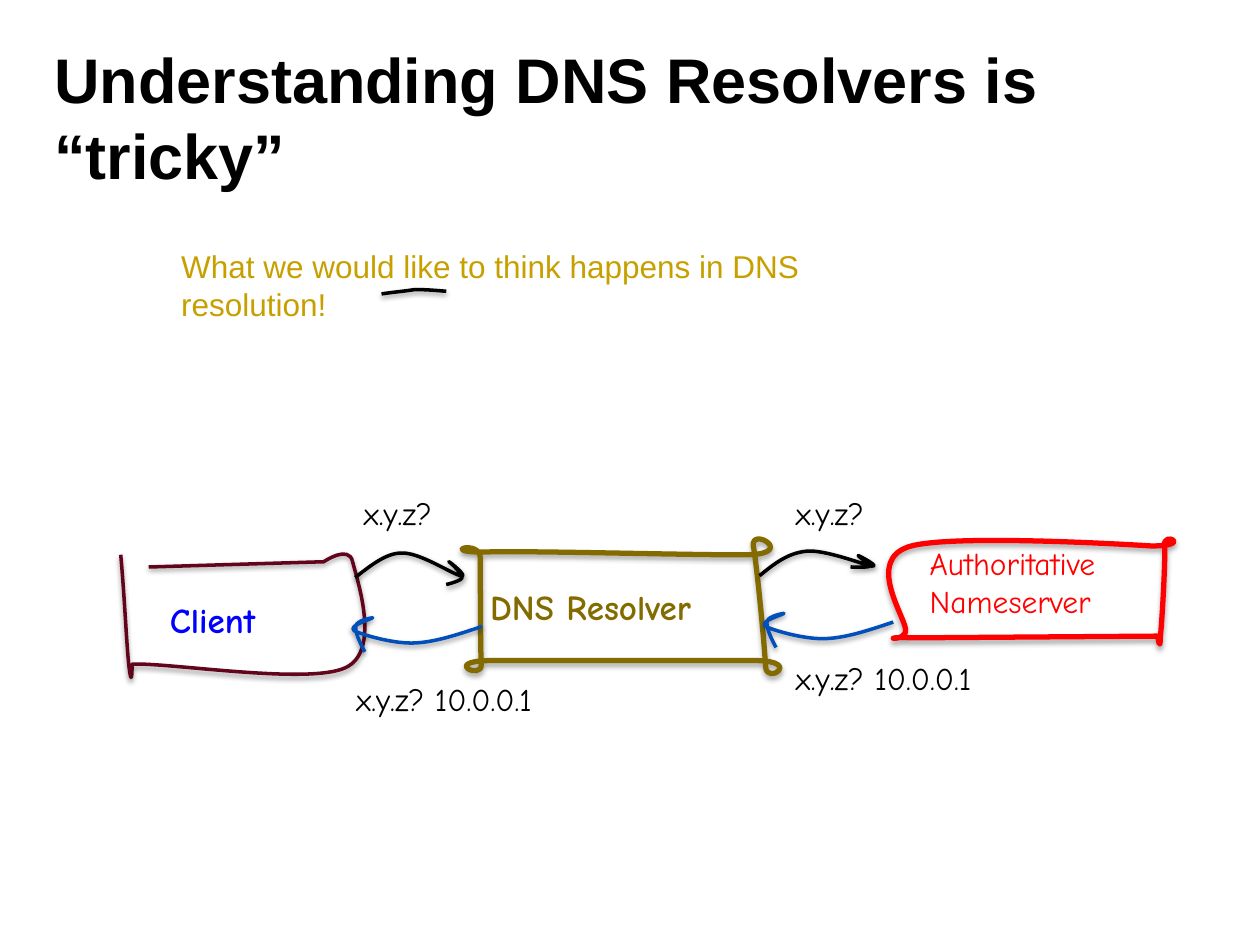
import pptx
import pptx.dml.color
import pptx.enum.text
import pptx.oxml
import pptx.oxml.ns
import pptx.util

Pt = pptx.util.Pt
space = pptx.oxml.ns.nsdecls("a")

deck = pptx.Presentation()
deck.slide_width, deck.slide_height = Pt(720), Pt(540)
slide = deck.slides.add_slide(deck.slide_layouts[6])


def write(left, top, width, height, lines, size, face, code, bold=False):
    """Add a text box with one paragraph per line."""
    box = slide.shapes.add_textbox(Pt(left), Pt(top), Pt(width), Pt(height))
    frame = box.text_frame
    frame.word_wrap = True
    for i, line in enumerate(lines):
        para = frame.add_paragraph() if i else frame.paragraphs[0]
        run = para.add_run()
        run.text = line
        run.font.name = face
        run.font.size = Pt(size)
        run.font.bold = bold
        run.font.color.rgb = pptx.dml.color.RGBColor.from_string(code)
    return frame


def draw(left, top, width, height, knots, code, weight=2, closed=False):
    """Add a curved stroke: a start, then three knots per cubic curve."""
    pen = slide.shapes.build_freeform(Pt(left), Pt(top), scale=1.0)
    pen.add_line_segments([(Pt(left + width), Pt(top + height))], close=closed)
    shape = pen.convert_to_shape()
    shape.fill.background()
    shape.line.color.rgb = pptx.dml.color.RGBColor.from_string(code)
    shape.line.width = Pt(weight)

    # Put curves in place of the plain diagonal
    marks = [f'<a:pt x="{Pt(x - left)}" y="{Pt(y - top)}"/>' for x, y in knots]
    route = shape.element.spPr.find(".//" + pptx.oxml.ns.qn("a:path"))
    for part in list(route):
        route.remove(part)
    parts = [("moveTo", marks[:1])]
    for i in range(0, len(knots) - 1, 3):
        a, b, c, d = marks[i:i + 4]
        straight = a == b and c == d
        parts.append(("lnTo", [d]) if straight else ("cubicBezTo", [b, c, d]))
    if closed:
        parts.append(("close", []))
    for tag, dots in parts:
        route.append(pptx.oxml.parse_xml(
            f'<a:{tag} {space}>{"".join(dots)}</a:{tag}>'))

    # Soft shadow straight below the stroke
    shape.shadow.inherit = False
    effects = shape.element.spPr.find(pptx.oxml.ns.qn("a:effectLst"))
    drop, alpha = (1.8, 35000) if weight == 3 else (1.6, 38000)
    effects.append(pptx.oxml.parse_xml(
        f'<a:outerShdw {space} blurRad="{Pt(3.1)}" dist="{Pt(drop)}" '
        'dir="5400000" rotWithShape="0"><a:srgbClr val="000000">'
        f'<a:alpha val="{alpha}"/></a:srgbClr></a:outerShdw>'))


comic = "Comic Neue"
black, blue = "000000", "004FBA"

# Title
title = write(31, 21.6, 657.4, 90, ["Understanding DNS Resolvers is “tricky”"],
              36, "Arial", black, True)
title.vertical_anchor = pptx.enum.text.MSO_ANCHOR.MIDDLE
title.margin_left = title.margin_right = Pt(0)
title.margin_top = title.margin_bottom = Pt(0)

# Lead line, with one word underlined by hand
write(96.5, 137.5, 427.7, 29,
      ["What we would like to think happens in DNS resolution!"],
      18, "Arial", "C7A000")
draw(218, 165.5, 37, 2.5, [
    (218, 168), (224.5, 167), (231, 166.5), (237, 165.5),
    (243.5, 165.5), (249, 166), (255, 166.5)], black)

# Client
write(90, 338.4, 80, 31.5, ["Client"], 20, comic, "0000FF", True)
draw(69, 316, 140, 70.5, [
    (69, 317), (71.5, 345), (72.5, 373), (74, 383),
    (75.5, 394), (75.5, 379.5), (75.5, 379.5),
    (96.5, 378.5), (176.5, 391.5), (197.5, 381.5),
    (218, 372), (204, 331), (201.5, 321),
    (199.5, 311), (185, 321), (185, 321),
    (185, 321), (85, 324), (85, 324)], "62041B")

# Resolver
write(273, 331.2, 165, 31.5, ["DNS Resolver"], 20, comic, "846B00", True)
draw(264, 308, 181.5, 77, [
    (275, 379.5), (276, 389), (252.5, 378), (279.5, 377.5),
    (305.5, 377.5), (406, 377.5), (432.5, 377.5),
    (458.5, 378), (438, 391.5), (437.5, 381),
    (437, 370), (432.5, 322.5), (430.5, 312),
    (429, 301), (454.5, 316), (428.5, 317),
    (402.5, 317.5), (301.5, 314.5), (276, 315.5),
    (250, 315.5), (274.5, 308), (274.5, 319),
    (274.5, 330), (274.5, 369.5), (275, 379.5)], "846B00", 3, True)

# First question
write(200.9, 278.6, 62.6, 29, ["x.y.z?"], 18, comic, black)
draw(203, 316, 61, 18, [
    (203, 330), (211.5, 323.5), (220.5, 316), (229.5, 316),
    (240, 315.5), (259, 328.5), (263.5, 329),
    (268, 330), (256.5, 320.5), (256.5, 321),
    (257, 321), (264, 327.5), (264, 330),
    (264, 332), (255, 334), (255, 334)], black)

# Name server, with the second question
write(524.2, 307.4, 134.6, 51, ["Authoritative", "Nameserver"],
      18, comic, "FF0000")
write(447.8, 278.6, 62.6, 29, ["x.y.z?"], 18, comic, black)
draw(508.5, 307.5, 162.5, 59.5, [
    (519, 312.5), (543, 304.5), (658, 312), (658, 312),
    (682.5, 312), (664, 303), (665.5, 312),
    (666, 320.5), (664, 355.5), (663, 364.5),
    (663, 373), (661.5, 363.5), (661.5, 363.5),
    (661.5, 363.5), (522.5, 364.5), (522.5, 364.5),
    (498, 363.5), (518.5, 368), (517.5, 359.5),
    (516, 350.5), (495.5, 320.5), (519, 312.5)], "FF0000", 3, True)
draw(434, 314.5, 65.5, 14.5, [
    (434, 329), (442, 322.5), (450, 316), (461, 315),
    (471.5, 314), (493, 322.5), (498, 323.5),
    (503.5, 324), (490.5, 317.5), (490.5, 317.5),
    (489.5, 317.5), (497.5, 322.5), (497, 323.5),
    (496, 324.5), (486, 324), (486, 324)], black)

# Replies: the same stroke, shifted
reply = [
    (510.5, 355.5), (497, 360), (482.5, 365), (470, 365),
    (458, 365), (441.5, 360), (437.5, 358),
    (433.5, 355), (447, 351.5), (448, 350.5),
    (448, 350.5), (439, 352), (438.5, 355),
    (437.5, 358), (440.5, 364.5), (443.5, 370)]
for dx, dy in ((0, 0), (-235, 2.5)):
    draw(436.8 + dx, 350.5 + dy, 73.7, 19.5,
         [(x + dx, y + dy) for x, y in reply], blue)
for left, top in ((447.8, 373), (196.6, 385.2)):
    write(left, top, 134.6, 29, ["x.y.z? 10.0.0.1"], 18, comic, black)

deck.save("out.pptx")
